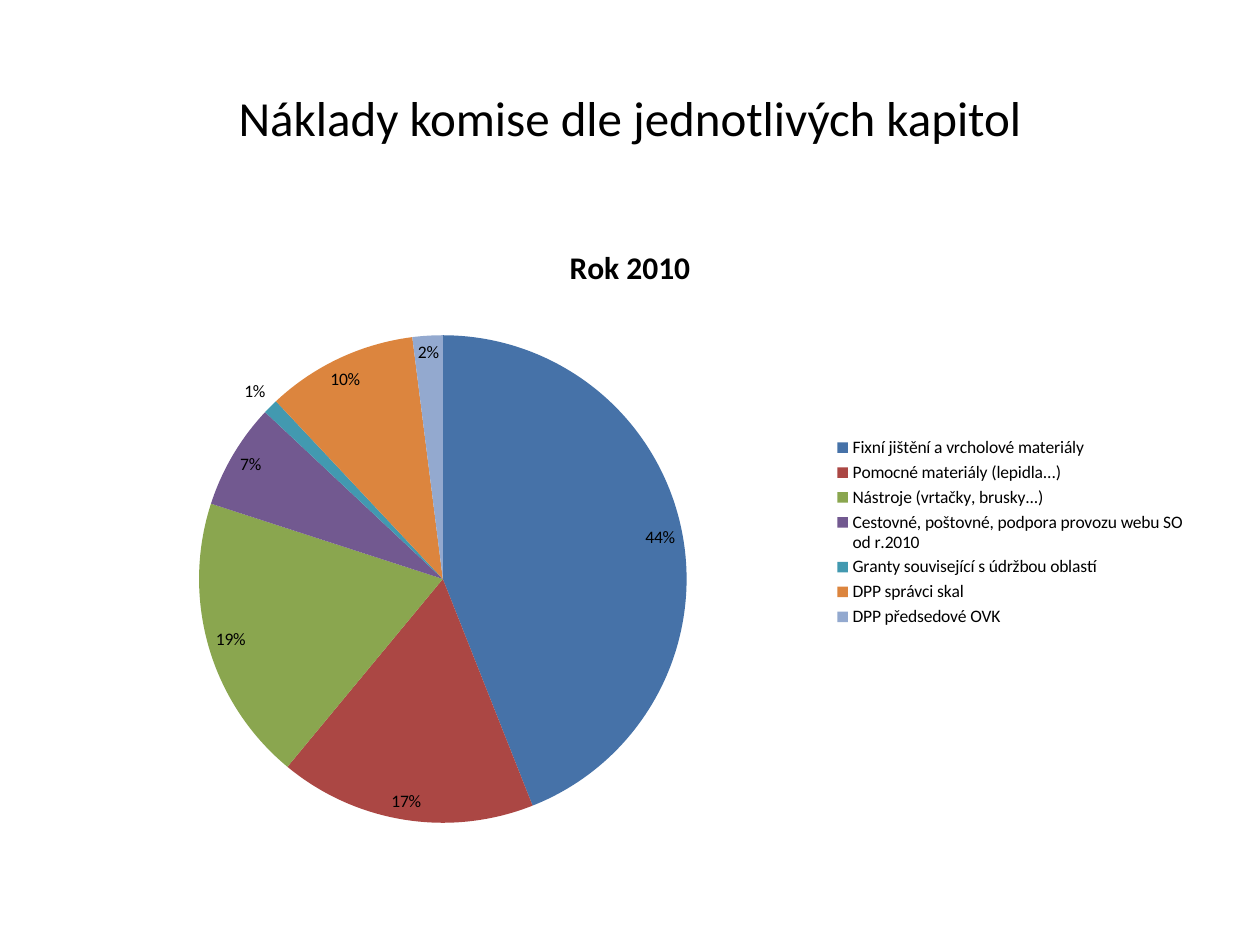
from dataclasses import dataclass

from lxml import etree
from pptx import Presentation
from pptx.chart.data import CategoryChartData
from pptx.dml.color import RGBColor
from pptx.enum.chart import XL_CHART_TYPE as ChartType
from pptx.enum.chart import XL_LABEL_POSITION as LabelPosition
from pptx.enum.chart import XL_LEGEND_POSITION as LegendPosition
from pptx.enum.text import MSO_ANCHOR, PP_ALIGN
from pptx.oxml.ns import qn
from pptx.util import Inches, Pt


@dataclass(frozen=True)
class Theme:
    font: str = "Calibri"
    ink: str = "000000"
    title_size: int = 28
    chart_title_size: int = 18
    chart_size: int = 10


theme = Theme()

costs = [
    ("Fixní jištění a vrcholové materiály", 44, "4672A8"),
    ("Pomocné materiály (lepidla...)", 17, "AB4744"),
    ("Nástroje (vrtačky, brusky...)", 19, "8AA64F"),
    ("Cestovné, poštovné, podpora provozu webu SO od r.2010", 7, "725990"),
    ("Granty související s údržbou oblastí", 1, "4299B0"),
    ("DPP správci skal", 10, "DC853E"),
    ("DPP předsedové OVK", 2, "93A9CF"),
]


def style_font(font, size, bold=False):
    font.name = theme.font
    font.size = Pt(size)
    font.bold = bold
    font.color.rgb = RGBColor.from_string(theme.ink)


def place(element, index, settings):
    for old in element.findall(qn("c:layout")):
        element.remove(old)
    layout = etree.Element(qn("c:layout"))
    manual = etree.SubElement(layout, qn("c:manualLayout"))
    for name, value in settings.items():
        etree.SubElement(manual, qn(f"c:{name}")).set("val", str(value))
    element.insert(index, layout)


deck = Presentation()
deck.slide_width, deck.slide_height = Inches(10), Inches(7.5)
page = deck.slides.add_slide(deck.slide_layouts[6])

title_box = page.shapes.add_textbox(Inches(0.5), Inches(0.3), Inches(9), Inches(1.25))
title_frame = title_box.text_frame
title_frame.word_wrap = True
title_frame.vertical_anchor = MSO_ANCHOR.MIDDLE
title_frame.text = "Náklady komise dle jednotlivých kapitol"
title_para = title_frame.paragraphs[0]
title_para.alignment = PP_ALIGN.CENTER
style_font(title_para.runs[0].font, theme.title_size)

cost_data = CategoryChartData()
cost_data.categories = [name for name, share, color in costs]
cost_data.add_series("Rok 2010", [share for name, share, color in costs])
chart = page.shapes.add_chart(
    ChartType.PIE, Inches(0.5), Inches(1.75), Inches(9), Inches(4.95), cost_data
).chart
style_font(chart.font, theme.chart_size)

chart.has_title = True
chart.chart_title.text_frame.text = "Rok 2010"
chart_title_span = chart.chart_title.text_frame.paragraphs[0].runs[0]
style_font(chart_title_span.font, theme.chart_title_size, bold=True)

pie = chart.plots[0]
pie.vary_by_categories = True
for index, (name, share, color) in enumerate(costs):
    fill = pie.series[0].points[index].format.fill
    fill.solid()
    fill.fore_color.rgb = RGBColor.from_string(color)

pie.has_data_labels = True
labels = pie.data_labels
labels.show_value = False
labels.show_percentage = True
labels.number_format = "0%"
labels.number_format_is_linked = False
labels.position = LabelPosition.BEST_FIT
style_font(labels.font, theme.chart_size)

chart.has_legend = True
legend = chart.legend
legend.position = LegendPosition.RIGHT
legend.include_in_layout = False
style_font(legend.font, theme.chart_size)

edges = {"xMode": "edge", "yMode": "edge"}
plot_area = chart.element.find(".//" + qn("c:plotArea"))
place(plot_area, 0, {"layoutTarget": "inner", **edges, "x": 0.12, "y": 0.18, "w": 0.43, "h": 0.79})
legend_element = chart.element.find(".//" + qn("c:legend"))
place(legend_element, 1, {**edges, "x": 0.68, "y": 0.34, "w": 0.31, "h": 0.32})

deck.save("out.pptx")
